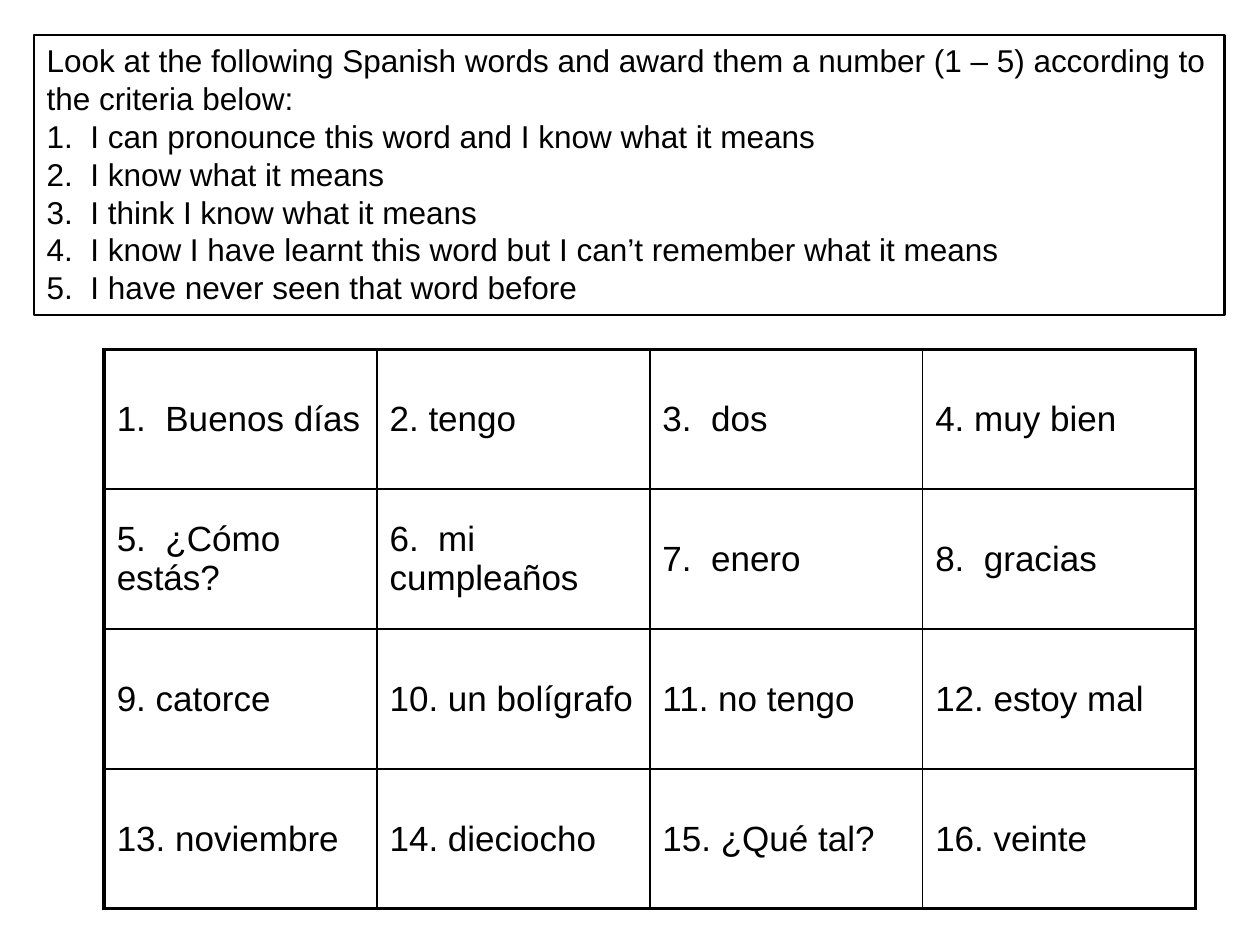
from lxml import etree
from pptx import Presentation
from pptx import util as u
from pptx.dml.color import RGBColor
from pptx.enum import shapes, text
from pptx.oxml import ns

BLACK = RGBColor(0, 0, 0)
FONT = "Arial"
COLUMNS = 4
THIN, THICK = 1, 2.25

INSTRUCTIONS = [
    "Look at the following Spanish words and award them a number (1 – 5) according to the criteria below:",
    "1.  I can pronounce this word and I know what it means",
    "2.  I know what it means",
    "3.  I think I know what it means",
    "4.  I know I have learnt this word but I can’t remember what it means",
    "5.  I have never seen that word before",
]
WORDS = [
    "1.  Buenos días", "2. tengo", "3.  dos", "4. muy bien",
    "5.  ¿Cómo estás?", "6.  mi cumpleaños", "7.  enero", "8.  gracias",
    "9. catorce", "10. un bolígrafo", "11. no tengo", "12. estoy mal",
    "13. noviembre", "14. dieciocho", "15. ¿Qué tal?", "16. veinte",
]


def write(frame, content, size):
    """Fill a text frame with one left-aligned paragraph."""
    frame.word_wrap = True
    paragraph = frame.paragraphs[0]
    paragraph.text = content
    paragraph.alignment = text.PP_ALIGN.LEFT
    for run in paragraph.runs:
        for name, value in {"name": FONT, "size": u.Pt(size)}.items():
            setattr(run.font, name, value)
        run.font.color.rgb = BLACK
    return paragraph


def add_instructions(slide):
    box = slide.shapes.add_shape(
        shapes.MSO_SHAPE.RECTANGLE, u.Cm(0.69), u.Cm(0.71), u.Cm(24), u.Cm(5.64))
    box.shadow.inherit = False
    box.fill.background()
    box.line.color.rgb = BLACK
    box.line.width = u.Pt(1.5)
    box.text_frame.vertical_anchor = text.MSO_ANCHOR.TOP
    criteria = write(box.text_frame, "\v".join(INSTRUCTIONS), 18)
    criteria.line_spacing = u.Pt(21.6)


def set_borders(cell, widths):
    """Draw the cell's sides; widths maps L, R, T, B to points."""
    properties = cell._tc.get_or_add_tcPr()
    for side, width in widths.items():
        border = etree.SubElement(properties, ns.qn(f"a:ln{side}"), w=str(u.Pt(width)))
        fill = etree.SubElement(border, ns.qn("a:solidFill"))
        etree.SubElement(fill, ns.qn("a:srgbClr"), val=str(BLACK))


def add_word_grid(slide):
    last_row, last_col = len(WORDS) // COLUMNS - 1, COLUMNS - 1
    grid = slide.shapes.add_table(
        last_row + 1, COLUMNS, u.Cm(2.1), u.Cm(7.04), u.Cm(22), u.Cm(11.28)).table
    grid.first_row = grid.horz_banding = False
    for index, word in enumerate(WORDS):
        row, col = divmod(index, COLUMNS)
        cell = grid.cell(row, col)
        cell.vertical_anchor = text.MSO_ANCHOR.MIDDLE
        write(cell.text_frame, word, 20)
        # Outer edges are thick, inner lines thin
        outer = {"L": col == 0, "R": col == last_col, "T": row == 0, "B": row == last_row}
        set_borders(cell, {side: THICK if edge else THIN for side, edge in outer.items()})
        cell.fill.background()


def main():
    deck = Presentation()
    deck.slide_width, deck.slide_height = u.Cm(25.4), u.Cm(19.05)
    slide = deck.slides.add_slide(deck.slide_layouts[6])
    # Criteria above, words to rate below
    add_instructions(slide)
    add_word_grid(slide)
    deck.save("out.pptx")


if __name__ == "__main__":
    main()
